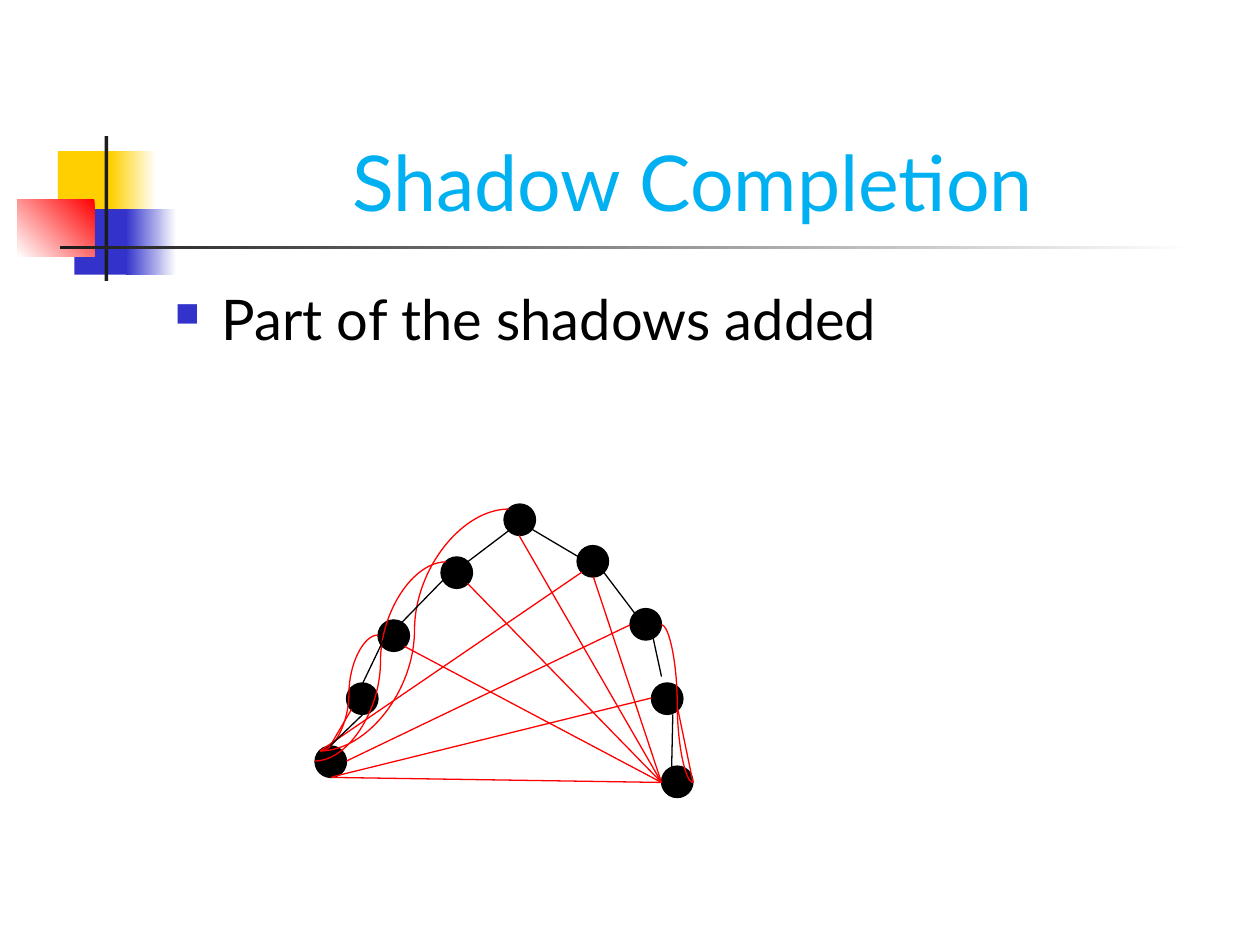
from math import cos, radians, sin

from lxml.etree import SubElement
from pptx import Presentation
from pptx.dml.color import RGBColor
from pptx.enum.shapes import MSO_CONNECTOR as Link, MSO_SHAPE as Shape
from pptx.enum.text import MSO_ANCHOR as Anchor, PP_ALIGN as Align
from pptx.oxml.ns import qn
from pptx.util import Inches, Pt

HUES = {
    "white": "FFFFFF", "black": "000000", "ink": "1C1C1C", "gold": "FFCF01",
    "blue": "3333CC", "red": "FF0000", "sky": "00B0F0",
}
FONT = "Lato"
SIZE = 0.25

# Top left corner of each node, along the arch from left to right
NODES = {
    "A": (2.5, 5.92), "B": (2.75, 5.42), "C": (3, 4.92),
    "D": (3.5, 4.42), "E": (4, 4), "F": (4.58, 4.33),
    "G": (5, 4.83), "H": (5.17, 5.42), "I": (5.25, 6.08),
}
SIDES = ("e", "se", "s", "sw", "w", "nw", "n", "ne")

# An end is a node with a side, or a plain point
LEFT = [("A s", "I w"), ("A s", "H w"), ("A e", "G w"), ("A nw", "F sw")]
LEFT_ARCS = [("A nw", "E nw"), ("A w", "D nw"), ("A nw", "C w")]
NEAR = [("A n", "B sw")]
PATH = [
    ("B n", "C n"), ("A e", "A s"), ("A n", "B s"),
    ((3.17, 4.96), (3.54, 4.58)), ("D ne", "E sw"),
    ((4.17, 4.17), (4.66, 4.46)), ("F se", "G nw"),
    ((5.17, 5), (5.25, 5.37)), ((5.34, 5.67), (5.33, 6.12)),
]
RIGHT = [("I w", "E s"), ("I w", "F s")]
RIGHT_ARCS = [("I e", "G e")]
FAR = [("I e", "H se"), ("I w", "D se"), ("I w", "C se")]


def rgb(hue):
    return RGBColor.from_string(HUES[hue])


def spot(end):
    """Return the point for an end such as "A nw"."""
    if not isinstance(end, str):
        return end
    node, side = end.split()
    x, y = NODES[node]
    turn = radians(45 * SIDES.index(side))
    half = SIZE / 2
    return round(x + half + half * cos(turn), 2), round(y + half + half * sin(turn), 2)


def write(frame, text, size, hue, align=Align.LEFT, anchor=Anchor.TOP):
    frame.word_wrap = True
    frame.vertical_anchor = anchor
    para = frame.paragraphs[0]
    para.alignment = align
    run = para.add_run()
    run.text = text
    run.font.name = FONT
    run.font.size = Pt(size)
    run.font.color.rgb = rgb(hue)
    return para


class Deck:
    """Holds the style and the current slide."""

    def __init__(self):
        self.file = Presentation()
        self.file.slide_width, self.file.slide_height = Inches(10), Inches(7.5)
        self.slide = self.file.slides.add_slide(self.file.slide_layouts[5])
        self.shapes = self.slide.shapes

    def title(self, text, box):
        head = self.shapes.title
        head.left, head.top, head.width, head.height = map(Inches, box)
        write(head.text_frame, text, 44, "sky", Align.CENTER, Anchor.BOTTOM)

    def bullet(self, text, box):
        frame = self.shapes.add_textbox(*map(Inches, box)).text_frame
        para = write(frame, text, 32, "black")
        para.space_before = Pt(8)
        props = para._p.get_or_add_pPr()
        props.set("marL", str(Inches(0.37)))
        props.set("indent", str(Inches(-0.37)))
        tint = SubElement(props, qn("a:buClr"))
        SubElement(tint, qn("a:srgbClr"), val=HUES["blue"])
        SubElement(props, qn("a:buSzPct"), val="60000")
        SubElement(props, qn("a:buChar"), char="■")

    def shape(self, kind, box):
        item = self.shapes.add_shape(kind, *map(Inches, box))
        item.shadow.inherit = False
        return item

    def block(self, box, *hues, angle=180):
        """Add a bare rectangle; two hues make a gradient."""
        item = self.shape(Shape.RECTANGLE, box)
        item.line.fill.background()
        if len(hues) == 1:
            item.fill.solid()
            item.fill.fore_color.rgb = rgb(hues[0])
            return
        item.fill.gradient()
        item.fill.gradient_angle = angle
        for stop, hue, place in zip(item.fill.gradient_stops, hues, (0, 1)):
            stop.color.rgb = rgb(hue)
            stop.position = place

    def dot(self, x, y):
        item = self.shape(Shape.OVAL, (x, y, SIZE, SIZE))
        item.fill.solid()
        item.fill.fore_color.rgb = rgb("black")
        item.line.color.rgb = rgb("black")
        item.line.width = Pt(0.75)

    def links(self, pairs, hue="red", kind=Link.STRAIGHT):
        for start, end in pairs:
            ends = map(Inches, spot(start) + spot(end))
            item = self.shapes.add_connector(kind, *ends)
            item.line.color.rgb = rgb(hue)
            item.line.width = Pt(0.75)
            SubElement(item._element.spPr, qn("a:effectLst"))


def main():
    deck = Deck()
    deck.block((0.46, 1.2, 0.48, 0.52), "gold")
    deck.block((0.88, 1.2, 0.36, 0.52), "white", "gold")
    deck.block((0.59, 1.66, 0.46, 0.52), "blue")
    deck.block((1, 1.66, 0.4, 0.52), "white", "blue")
    deck.block((0.14, 1.58, 0.61, 0.46), "red", "white", angle=225)
    deck.block((0.83, 1.08, 0.03, 1.15), "ink")
    deck.block((0.48, 1.95, 9, 0.03), "white", "ink")

    deck.title("Shadow Completion", (1.24, 0.25, 8.52, 1.6))
    deck.bullet("Part of the shadows added", (1.29, 2.21, 8.5, 4.5))

    for x, y in NODES.values():
        deck.dot(x, y)
    deck.links(LEFT)
    deck.links(LEFT_ARCS, kind=Link.CURVE)
    deck.links(NEAR)
    deck.links(PATH, "black")
    deck.links(RIGHT)
    deck.links(RIGHT_ARCS, kind=Link.CURVE)
    deck.links(FAR)
    deck.file.save("out.pptx")


if __name__ == "__main__":
    main()
